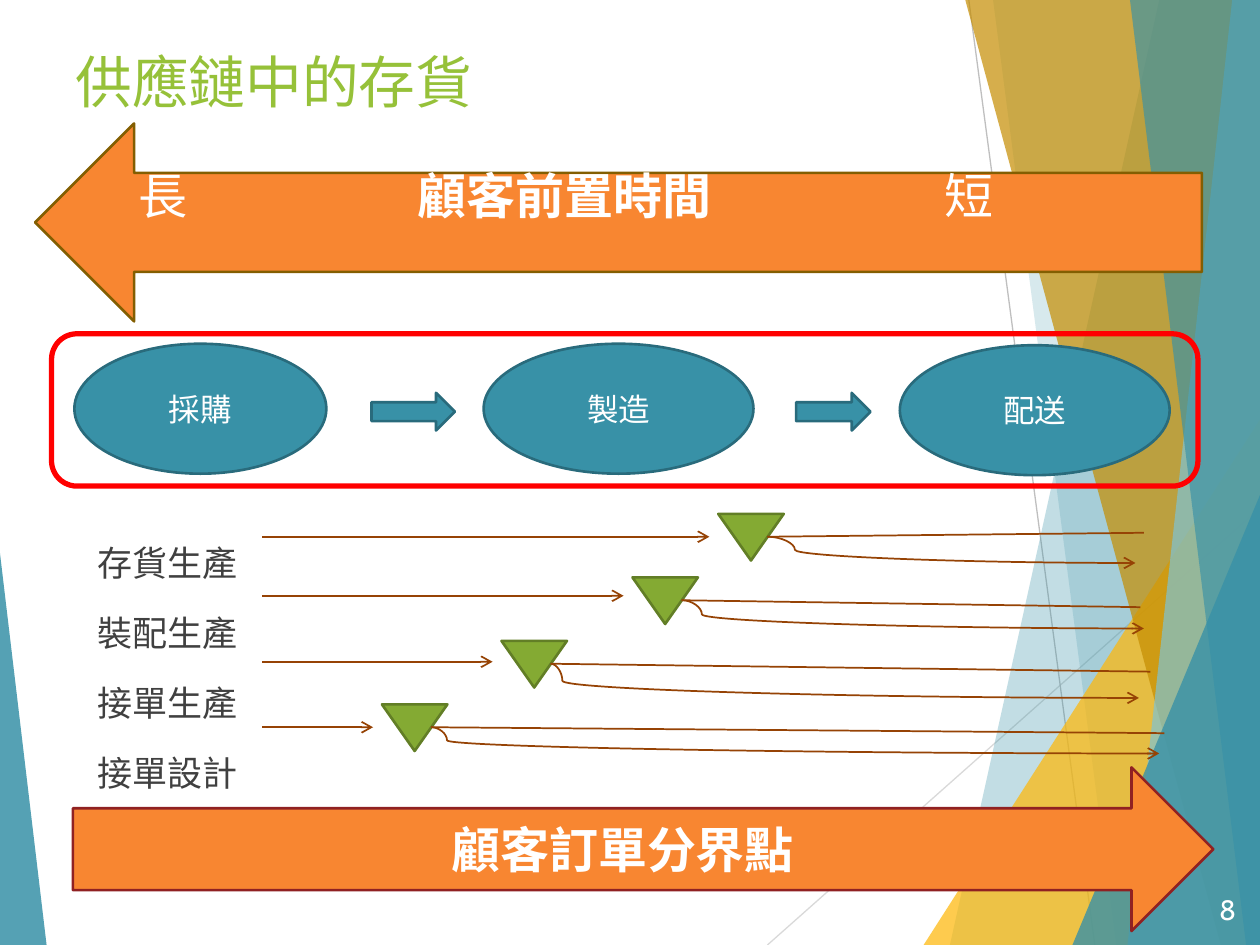
from lxml.etree import SubElement
from pptx import Presentation
from pptx.dml.color import RGBColor
from pptx.enum.shapes import MSO_CONNECTOR, MSO_SHAPE
from pptx.enum.text import MSO_ANCHOR, PP_ALIGN
from pptx.oxml.ns import qn
from pptx.util import Cm, Pt

W, H = 25.4, 19.05
TEAL, ORANGE, BROWN, WHITE = "3891A7", "F88631", "964305", "FFFFFF"


def rgb(value):
    return RGBColor.from_string(value)


class Deck:
    """Hold the text style and the current slide, and draw each kind of element."""

    font = "Cabin"

    def __init__(self):
        self.prs = Presentation()
        self.prs.slide_width, self.prs.slide_height = Cm(W), Cm(H)
        self.s = self.prs.slides.add_slide(self.prs.slide_layouts[6])

    def label(self, sp, paragraphs, size, color=WHITE, align=PP_ALIGN.CENTER,
              anchor=MSO_ANCHOR.MIDDLE, **frame):
        tf = sp.text_frame
        frame = {"word_wrap": True, "vertical_anchor": anchor, **frame}
        for name, value in frame.items():
            setattr(tf, name, value)
        for i, runs in enumerate(paragraphs):
            p = tf.add_paragraph() if i else tf.paragraphs[0]
            p.alignment = align
            for text, bold in runs:
                r = p.add_run()
                r.text = text
                style = {"name": self.font, "size": Pt(size), "bold": bold}
                for name, value in style.items():
                    setattr(r.font, name, value)
                r.font.color.rgb = rgb(color)
        return tf

    def text(self, box, lines, size, color, **options):
        sp = self.s.shapes.add_textbox(*map(Cm, box))
        return self.label(sp, [[(line, False)] for line in lines], size, color, **options)

    def shape(self, kind, box, fill, line, width=1.5):
        sp = self.s.shapes.add_shape(kind, *map(Cm, box))
        sp.shadow.inherit = False
        if fill:
            sp.fill.solid()
            sp.fill.fore_color.rgb = rgb(fill)
        else:
            sp.fill.background()
        sp.line.color.rgb = rgb(line)
        sp.line.width = Pt(width)
        return sp

    def facet(self, points, color, opacity):
        points = [(Cm(x), Cm(y)) for x, y in points]
        builder = self.s.shapes.build_freeform(*points[0])
        builder.add_line_segments(points[1:])
        sp = builder.convert_to_shape()
        sp.shadow.inherit = False
        sp.fill.solid()
        sp.fill.fore_color.rgb = rgb(color)
        sp.line.fill.background()
        clr = sp._element.spPr.find(qn("a:solidFill"))[0]
        SubElement(clr, qn("a:alpha"), val=str(opacity * 1000))

    def line(self, start, end, color=BROWN, width=1, arrow=False, bend=None):
        kind = MSO_CONNECTOR.CURVE if bend else MSO_CONNECTOR.STRAIGHT
        sp = self.s.shapes.add_connector(kind, *map(Cm, (*start, *end)))
        sp.line.color.rgb = rgb(color)
        sp.line.width = Pt(width)
        spPr = sp._element.spPr
        if arrow:
            SubElement(spPr.find(qn("a:ln")), qn("a:tailEnd"), type="arrow")
        if bend:
            guides = spPr.find(qn("a:prstGeom")).find(qn("a:avLst"))
            SubElement(guides, qn("a:gd"), name="adj1", fmla=f"val {bend}")
        SubElement(spPr, qn("a:effectLst"))

    def tabs(self, p, stops):
        tab_list = SubElement(p._p.get_or_add_pPr(), qn("a:tabLst"))
        for stop in stops:
            SubElement(tab_list, qn("a:tab"), pos=str(Cm(stop)), algn="l")


def backdrop(d):
    d.line((15.47, H), (W, 10.24), "D9D9D9", 0.75)
    d.line((19.53, 0), (22.07, H), "BFBFBF", 0.75)
    corners = [(W, H), (W, 0)]
    for points, color, opacity in [
        ([(23.37, 0), (19.15, H), *corners], TEAL, 30),
        ([(20.02, 0), (22.5, H), *corners], TEAL, 20),
        ([(18.62, H), (W, 8.46), (W, H)], "FEB80A", 72),
        ([(19.46, 0), (24.61, H), *corners], "C58D01", 70),
        ([(24.84, 0), (22.73, H), *corners], "7EC3D4", 70),
        ([(22.78, 0), (25.12, H), *corners], TEAL, 65),
        ([(21.62, H), (W, 9.98), (W, H)], TEAL, 80),
        ([(0, 11.15), (0.94, H), (0, H)], TEAL, 85),
    ]:
        d.facet(points, color, opacity)


def lead_time(d):
    sp = d.shape(MSO_SHAPE.LEFT_ARROW, (0.71, 2.49, 23.52, 3.99), ORANGE, "835E01")
    runs = [("\t長\t", False), ("顧客前置時間\t", True), ("短", False)]
    tf = d.label(sp, [runs], 28, align=PP_ALIGN.LEFT, margin_bottom=Cm(1.22))
    d.tabs(tf.paragraphs[0], (0.83, 6.46, 17.08))


def process(d):
    for name, x, y, w in [("採購", 1.5, 6.93, 5.08), ("製造", 9.75, 6.93, 5.44),
                          ("配送", 18.14, 6.96, 5.44)]:
        sp = d.shape(MSO_SHAPE.OVAL, (x, y, w, 2.62), TEAL, "296B7C")
        d.label(sp, [[(name, False)]], 18)
    for x, w in [(7.49, 1.68), (16.05, 1.5)]:
        d.shape(MSO_SHAPE.RIGHT_ARROW, (x, 7.92, w, 0.76), TEAL, "296B7C")


def strategies(d):
    tf = d.text((1.96, 10, 4.2, 6), ["存貨生產", "裝配生產", "接單生產", "接單設計"], 20,
                "404040", align=PP_ALIGN.LEFT, anchor=MSO_ANCHOR.BOTTOM,
                margin_left=0, margin_bottom=0)
    for p in tf.paragraphs:
        p.line_spacing = Pt(40)
    rows = [
        (10.82, 14.48, (23.06, 10.74), (22.89, 11.35), 7500),
        (12.01, 12.75, (22.99, 12.24), (23.06, 12.67), 4400),
        (13.34, 10.11, (23.19, 13.54), (22.96, 14.07), 2000),
        (14.66, 7.7, (23.47, 14.78), (23.37, 15.19), 2200),
    ]
    for i, (y, x, line_end, curve_end, bend) in enumerate(rows):
        top = 10.36 + 1.28 * i
        start = (x + 0.99, top + 0.46)
        d.line((5.29, y), (x - 0.18, y), arrow=True)
        d.shape(MSO_SHAPE.FLOWCHART_MERGE, (x, top, 1.32, 0.94), "84AA33", "627E26")
        d.line(start, line_end)
        d.line(start, curve_end, arrow=True, bend=bend)


def main():
    d = Deck()
    backdrop(d)
    d.text((1.27, 0.76, 22.86, 1.75), ["供應鏈中的存貨"], 32.4, "96C139", align=PP_ALIGN.LEFT)
    lead_time(d)
    process(d)
    strategies(d)
    sp = d.shape(MSO_SHAPE.RIGHT_ARROW, (1.47, 15.47, 22.99, 3.3), ORANGE, "902122")
    d.label(sp, [[("顧客訂單分界點", True)]], 28)
    d.shape(MSO_SHAPE.ROUNDED_RECTANGLE, (1.04, 6.73, 23.11, 3.07), None, "FF0000", 3)
    d.text((23.75, 17.83, 1.42, 1.02), ["8"], 16, WHITE, align=PP_ALIGN.RIGHT)
    d.prs.save("out.pptx")


if __name__ == "__main__":
    main()
